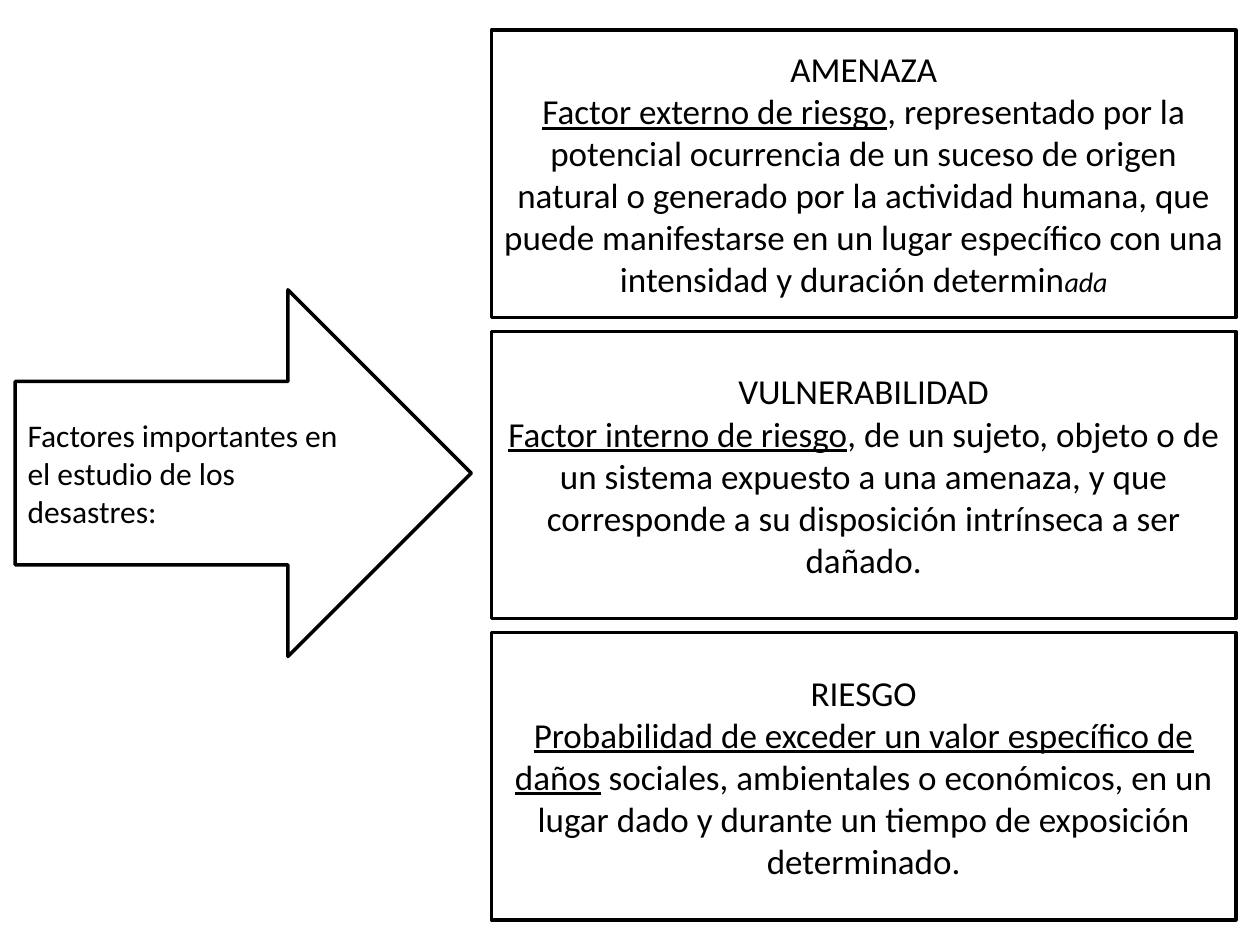
from pptx import Presentation
from pptx.dml.color import RGBColor
from pptx.enum.shapes import MSO_SHAPE
from pptx.enum.text import MSO_ANCHOR, PP_ALIGN
from pptx.util import Inches, Pt

COLORS = {"fill": "FFFFFF", "ink": "000000"}
FONT = "Calibri"
BOX_LEFT, BOX_TOP, BOX_WIDTH, BOX_HEIGHT, BOX_STEP = 3.9, 0.24, 5.91, 2.28, 2.39

# Heading, underlined term, explanation, small italic ending
FACTORS = [
    ("AMENAZA", "Factor externo de riesgo",
     ", representado por la potencial ocurrencia de un suceso de origen natural "
     "o generado por la actividad humana, que puede manifestarse en un lugar "
     "específico con una intensidad y duración determin", "ada"),
    ("VULNERABILIDAD", "Factor interno de riesgo",
     ", de un sujeto, objeto o de un sistema expuesto a una amenaza, y que "
     "corresponde a su disposición intrínseca a ser dañado.", ""),
    ("RIESGO", "Probabilidad de exceder un valor específico de daños",
     " sociales, ambientales o económicos, en un lugar dado y durante un tiempo "
     "de exposición determinado.", ""),
]


def color(name):
    return RGBColor.from_string(COLORS[name])


def add_outlined_shape(slide, kind, left, top, width, height):
    s = slide.shapes.add_shape(kind, Inches(left), Inches(top),
                               Inches(width), Inches(height))
    s.shadow.inherit = False
    s.fill.solid()
    s.fill.fore_color.rgb = color("fill")
    s.line.color.rgb = color("ink")
    s.line.width = Pt(2)
    s.text_frame.word_wrap = True
    s.text_frame.vertical_anchor = MSO_ANCHOR.MIDDLE
    return s


def add_run(p, text, size, underline=None, italic=None):
    r = p.add_run()
    r.text = text
    r.font.name = FONT
    r.font.size = Pt(size)
    r.font.color.rgb = color("ink")
    r.font.underline = underline
    r.font.italic = italic


def add_arrow(slide, text):
    s = add_outlined_shape(slide, MSO_SHAPE.RIGHT_ARROW, 0.12, 2.3, 3.62, 2.91)
    p = s.text_frame.paragraphs[0]
    p.alignment = PP_ALIGN.LEFT
    add_run(p, text, 18)


def add_factor_box(slide, top, heading, term, explanation, ending):
    s = add_outlined_shape(slide, MSO_SHAPE.RECTANGLE,
                           BOX_LEFT, top, BOX_WIDTH, BOX_HEIGHT)
    tf = s.text_frame
    title, body = tf.paragraphs[0], tf.add_paragraph()
    title.alignment = body.alignment = PP_ALIGN.CENTER
    add_run(title, heading, 20)
    add_run(body, term, 20, underline=True)
    add_run(body, explanation, 20)
    if ending:
        add_run(body, ending, 16, italic=True)


def main():
    prs = Presentation()
    prs.slide_width, prs.slide_height = Inches(10), Inches(7.5)
    slide = prs.slides.add_slide(prs.slide_layouts[6])
    add_arrow(slide, "Factores importantes en el estudio de los desastres:")
    for i, factor in enumerate(FACTORS):
        add_factor_box(slide, BOX_TOP + i * BOX_STEP, *factor)
    prs.save("out.pptx")


if __name__ == "__main__":
    main()
